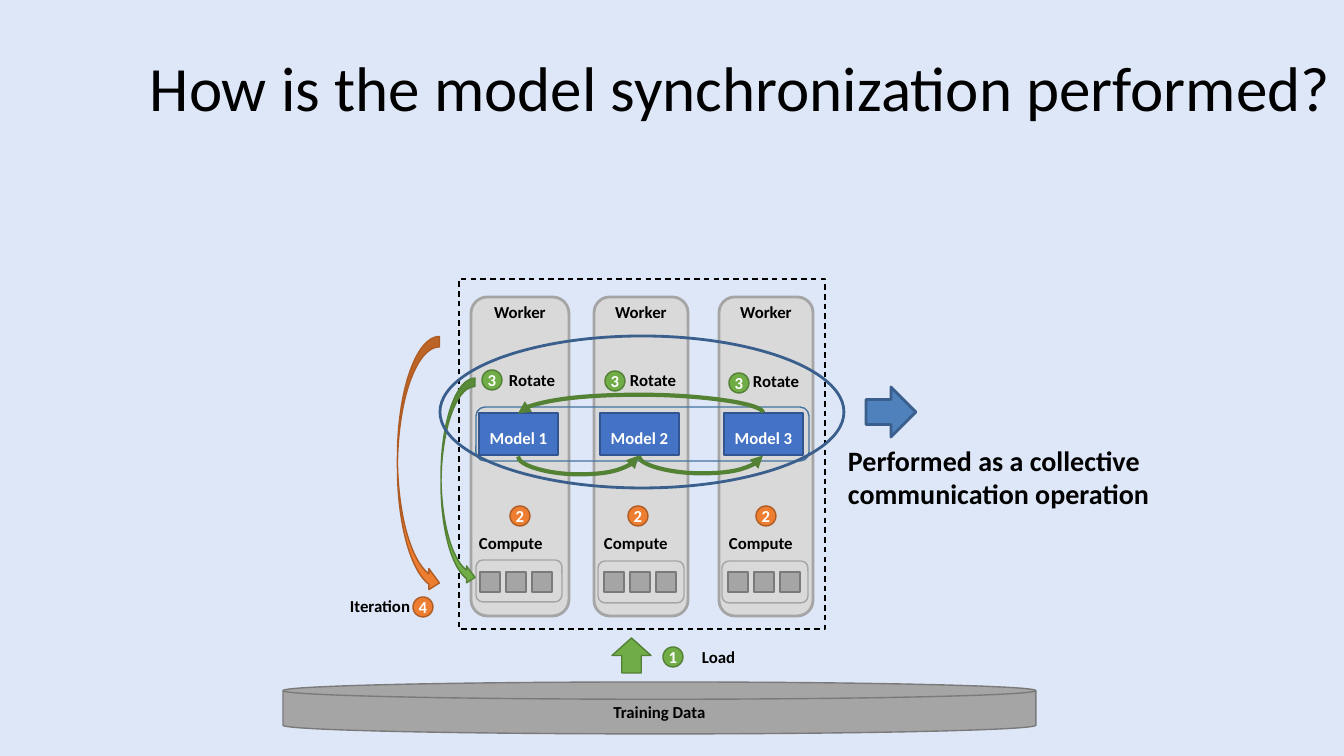
from dataclasses import dataclass

from lxml import etree
from pptx import Presentation
from pptx import util as u
from pptx.dml.color import RGBColor
from pptx.enum import dml, shapes, text
from pptx.oxml.ns import qn

TITLE = "How is the model synchronization performed?"
CALLOUT = "Performed as a collective communication operation"

WORKERS = [
    {"model": "Model 1", "body": (471, 98), "model_x": 479, "compute": (469, 510),
     "rotate": (499, 365), "badge": (482, 370), "tray": (476, 560), "cells_x": 480},
    {"model": "Model 2", "body": (594, 94), "model_x": 600, "compute": (594, 628),
     "rotate": (620, 365), "badge": (605, 371), "tray": (598, 561), "cells_x": 604},
    {"model": "Model 3", "body": (719, 94), "model_x": 724, "compute": (719, 756),
     "rotate": (743, 366), "badge": (729, 373), "tray": (722, 561), "cells_x": 728},
]
LABELS = [("Load", (692, 642, 96, 30)), ("Iteration", (340, 591, 132, 30))]
ROTATIONS = [(518, 639, 456, 18, 90), (639, 763, 456, 17, 90), (763, 518, 413, 18, 270)]
CELL_STEP = 26


@dataclass(frozen=True)
class Theme:
    font: str = "Calibri"
    title: int = 45
    callout: int = 20
    label: int = 12
    background: str = "DEE7F8"
    black: str = "000000"
    white: str = "FFFFFF"
    gray: str = "A5A5A5"
    gray_edge: str = "7A7A7A"
    worker: str = "D9D9D9"
    green: str = "70AD47"
    green_edge: str = "538035"
    rotation: str = "548235"
    orange: str = "ED7D31"
    orange_edge: str = "AF5C24"
    model: str = "4472C4"
    model_edge: str = "325491"
    ring: str = "43739E"
    blue: str = "4F81BD"
    blue_edge: str = "3A5F8C"


theme = Theme()
KIND = shapes.MSO_SHAPE
MIDDLE = text.MSO_ANCHOR.MIDDLE
TOP = text.MSO_ANCHOR.TOP


def px(length):
    return u.Emu(round(length * 914400 / 100.8))


def color(value):
    return RGBColor.from_string(value)


def write(shape, content, size, ink, bold=True, align=text.PP_ALIGN.LEFT,
          anchor=TOP, insets=(10, 5), wrap=True, spacing=None):
    frame = shape.text_frame
    frame.word_wrap = wrap
    frame.vertical_anchor = anchor
    frame.margin_left = frame.margin_right = px(insets[0])
    frame.margin_top = frame.margin_bottom = px(insets[1])
    paragraph = frame.paragraphs[0]
    paragraph.alignment = align
    if spacing:
        paragraph.line_spacing = u.Pt(spacing)
    run = paragraph.add_run()
    run.text = content
    run.font.name = theme.font
    run.font.size = u.Pt(size)
    run.font.bold = bold
    run.font.color.rgb = color(ink)


def add_shape(slide, kind, box, fill, edge, weight=1):
    shape = slide.shapes.add_shape(kind, *map(px, box))
    shape.shadow.inherit = False
    if fill:
        shape.fill.solid()
        shape.fill.fore_color.rgb = color(fill)
    else:
        shape.fill.background()
    shape.line.color.rgb = color(edge)
    shape.line.width = u.Pt(weight)
    return shape


def add_label(slide, content, box, size=theme.label):
    write(slide.shapes.add_textbox(*map(px, box)), content, size, theme.black)


def add_badge(slide, number, left, top, fill, edge):
    badge = add_shape(slide, KIND.OVAL, (left, top, 20, 20), fill, edge)
    write(badge, number, theme.label, theme.white, align=text.PP_ALIGN.CENTER,
          anchor=MIDDLE, insets=(0, 0), wrap=False)


def add_curved_arrow(slide, box, angle, flip, fill, edge):
    arrow = add_shape(slide, KIND.CURVED_DOWN_ARROW, box, fill, edge)
    arrow.rotation = angle
    arrow._element.spPr.find(qn("a:xfrm")).set(flip, "1")


def add_rotation(slide, start, end, y, depth, angle):
    span = abs(end - start)
    middle = (start + end) / 2
    connector = slide.shapes.add_connector(shapes.MSO_CONNECTOR.CURVE, 0, 0, 0, 0)
    connector.left, connector.top = px(middle - 0.5), px(y - span / 2)
    connector.width, connector.height = px(1), px(span)
    connector.line.color.rgb = color(theme.rotation)
    connector.line.width = u.Pt(3)
    properties = connector._element.spPr
    frame = properties.find(qn("a:xfrm"))
    frame.set("rot", str(angle * 60000))
    frame.set("flipH", "1")
    frame.set("flipV", "1")
    geometry = properties.find(qn("a:prstGeom"))
    adjustments = geometry.find(qn("a:avLst"))
    etree.SubElement(adjustments, qn("a:gd"), name="adj1", fmla=f"val {-depth * 100000}")
    etree.SubElement(properties.find(qn("a:ln")), qn("a:tailEnd"), type="triangle")
    etree.SubElement(properties, qn("a:effectLst"))


def add_worker(slide, worker):
    left, width = worker["body"]
    body = add_shape(slide, KIND.ROUNDED_RECTANGLE, (left, 297, width, 319),
                     theme.worker, theme.gray, 2)
    write(body, "Worker", theme.label, theme.black,
          align=text.PP_ALIGN.CENTER, insets=(10, 0))
    add_label(slide, "Rotate", (*worker["rotate"], 78, 30))
    add_badge(slide, "3", *worker["badge"], theme.green, theme.green_edge)
    model = add_shape(slide, KIND.RECTANGLE, (worker["model_x"], 413, 79, 42),
                      theme.model, theme.model_edge)
    write(model, worker["model"], theme.label, theme.white, align=text.PP_ALIGN.CENTER,
          anchor=MIDDLE, insets=(0, 5), spacing=20)
    label_x, badge_x = worker["compute"]
    add_label(slide, "Compute", (label_x, 528, 100, 30))
    add_badge(slide, "2", badge_x, 506, theme.orange, theme.orange_edge)
    add_shape(slide, KIND.ROUNDED_RECTANGLE, (*worker["tray"], 86, 42), None, theme.gray)
    for column in range(3):
        cell_x = worker["cells_x"] + column * CELL_STEP
        add_shape(slide, KIND.RECTANGLE, (cell_x, 572, 20, 20), theme.gray, theme.gray_edge)


def main():
    presentation = Presentation()
    presentation.slide_width, presentation.slide_height = px(1344), px(756)
    slide = presentation.slides.add_slide(presentation.slide_layouts[5])
    slide.background.fill.solid()
    slide.background.fill.fore_color.rgb = color(theme.background)

    title = slide.shapes.title
    title.left, title.top, title.width, title.height = map(px, (135, 23, 1210, 126))
    write(title, TITLE, theme.title, theme.black, bold=False,
          align=text.PP_ALIGN.CENTER, anchor=MIDDLE)

    disk = add_shape(slide, KIND.FLOWCHART_MAGNETIC_DISK, (283, 682, 753, 52),
                     theme.gray, theme.gray_edge)
    write(disk, "Training Data", theme.label, theme.black,
          align=text.PP_ALIGN.CENTER, anchor=MIDDLE)
    add_shape(slide, KIND.UP_ARROW, (612, 638, 39, 35), theme.green, theme.green_edge)
    add_badge(slide, "1", 663, 647, theme.green, theme.green_edge)
    add_badge(slide, "4", 413, 597, theme.orange, theme.orange_edge)
    for content, box in LABELS:
        add_label(slide, content, box)
    add_curved_arrow(slide, (290, 444, 257, 42), 90, "flipV", theme.orange, theme.orange_edge)

    for worker in WORKERS:
        add_worker(slide, worker)

    add_shape(slide, KIND.ROUNDED_RECTANGLE, (476, 407, 333, 54), None, theme.ring)
    cluster = add_shape(slide, KIND.RECTANGLE, (459, 279, 366, 350), None, theme.black)
    cluster.line.dash_style = dml.MSO_LINE.DASH
    add_curved_arrow(slide, (354, 465, 208, 34), 270, "flipH", theme.green, theme.green_edge)
    for rotation in ROTATIONS:
        add_rotation(slide, *rotation)

    add_label(slide, CALLOUT, (838, 438, 324, 78), theme.callout)
    add_shape(slide, KIND.RIGHT_ARROW, (866, 387, 50, 50), theme.blue, theme.blue_edge, 2)
    add_shape(slide, KIND.OVAL, (440, 336, 404, 152), None, theme.blue_edge, 2)
    presentation.save("out.pptx")


if __name__ == "__main__":
    main()
